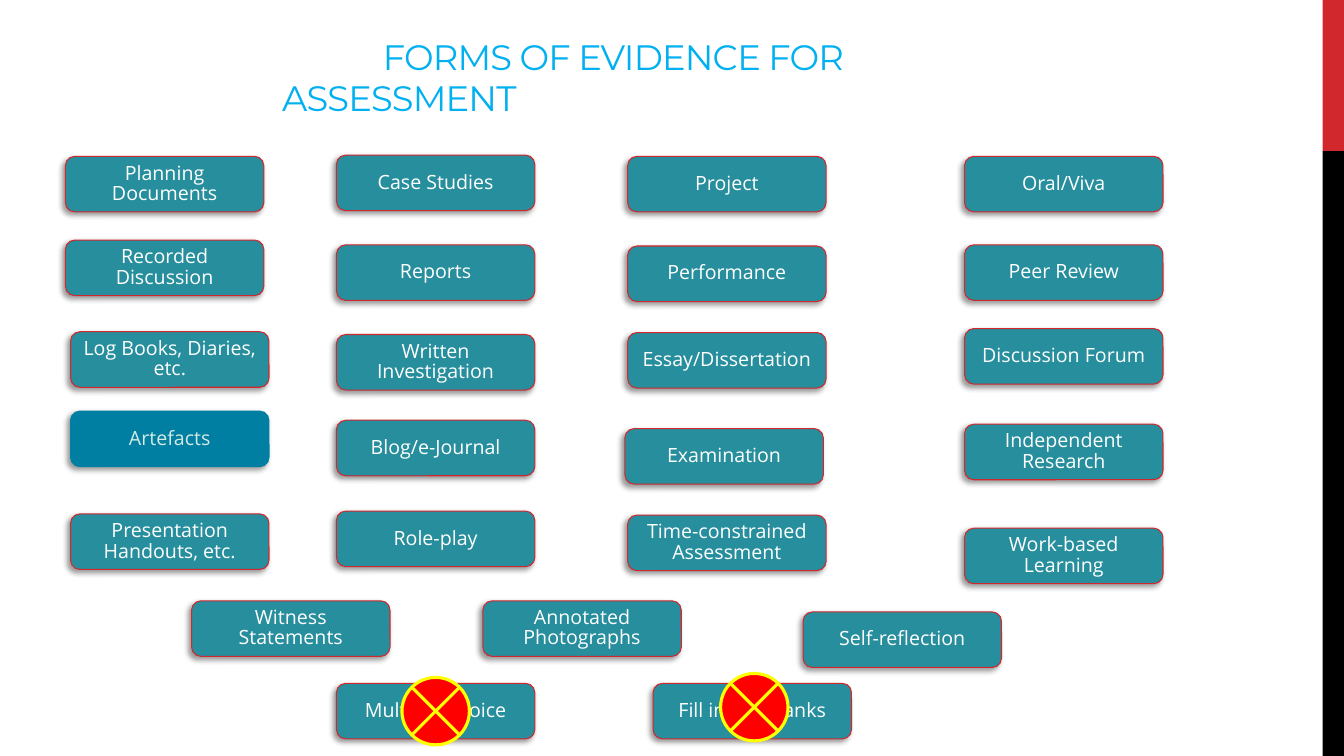
from lxml import etree
from pptx import Presentation
from pptx.dml.color import RGBColor
from pptx.enum.shapes import MSO_SHAPE
from pptx.enum.text import MSO_ANCHOR, PP_ALIGN
from pptx.oxml.ns import qn
from pptx.util import Cm, Pt

RECT = MSO_SHAPE.RECTANGLE
ROUNDED = MSO_SHAPE.ROUNDED_RECTANGLE
CROSS = MSO_SHAPE.FLOWCHART_SUMMING_JUNCTION
MIDDLE, BOTTOM = MSO_ANCHOR.MIDDLE, MSO_ANCHOR.BOTTOM
CENTER, LEFT = PP_ALIGN.CENTER, PP_ALIGN.LEFT

COLORS = {
    "red": "D1282E", "black": "000000", "sky": "00B0F0", "teal": "268E9C",
    "blue": "007FA3", "mint": "D4EAE4", "white": "FFFFFF",
    "cross": "FF0000", "yellow": "FFFF00",
}
TITLE_FONT = {"name": "Montserrat", "size": Pt(25.2)}
CARD_FONT = {"name": "Open Sans", "size": Pt(14)}
TITLE_PARA = {"alignment": LEFT, "line_spacing": 0.98}
CARD_PARA = {"alignment": CENTER, "line_spacing": 0.87}
SHADOW = {"blurRad": "50800", "dist": "38100", "dir": "8100000",
          "algn": "tr", "rotWithShape": "0"}

CARD_W, CARD_H, CROSS_SIZE = 5.0, 1.4, 1.7
COLUMNS = [
    (1.65, [("Planning Documents", 3.94), ("Recorded Discussion", 6.05)]),
    (1.78, [("Log Books, Diaries, etc.", 8.36), ("Artefacts", 10.36),
            ("Presentation Handouts, etc.", 12.95)]),
    (8.48, [("Case Studies", 3.91), ("Reports", 6.17),
            ("Written Investigation", 8.43), ("Blog/e-Journal", 10.59),
            ("Role-play", 12.88), ("Multiple Choice", 17.22)]),
    (15.82, [("Project", 3.94), ("Performance", 6.2),
             ("Essay/Dissertation", 8.38),
             ("Time-constrained Assessment", 12.98)]),
    (15.75, [("Examination", 10.8)]),
    (24.31, [("Oral/Viva", 3.94), ("Peer Review", 6.17),
             ("Discussion Forum", 8.28), ("Independent Research", 10.69),
             ("Work-based Learning", 13.31)]),
    (4.83, [("Witness Statements", 15.14)]),
    (12.17, [("Annotated Photographs", 15.14)]),
    (20.24, [("Self-reflection", 15.42)]),
    (16.46, [("Fill in the Blanks", 17.22)]),
]
HIGHLIGHT = "Artefacts"
CROSSES = [(10.13, 17.07), (18.16, 16.97)]


def rgb(name):
    """Return the named colour."""
    return RGBColor.from_string(COLORS[name])


def add_block(s, kind, box, fill, line=None, width=0.75):
    """Add a filled shape without a shadow, with an optional outline."""
    sp = s.shapes.add_shape(kind, *[Cm(v) for v in box])
    sp.shadow.inherit = False
    sp.fill.solid()
    sp.fill.fore_color.rgb = rgb(fill)
    if line:
        sp.line.color.rgb = rgb(line)
        sp.line.width = Pt(width)
    else:
        sp.line.fill.background()
    return sp


def add_text(sp, text, color, anchor, para, font):
    """Write one formatted paragraph and return it."""
    tf = sp.text_frame
    tf.word_wrap = True
    tf.vertical_anchor = anchor
    p = tf.paragraphs[0]
    r = p.add_run()
    r.text = text
    for target, values in ((p, para), (r.font, font)):
        for key, value in values.items():
            setattr(target, key, value)
    r.font.color.rgb = rgb(color)
    return p


def add_shadow(sp):
    """Give a shape a soft shadow towards its lower left."""
    effects = sp._element.spPr.find(qn("a:effectLst"))
    outer = etree.SubElement(effects, qn("a:outerShdw"), SHADOW)
    tint = etree.SubElement(outer, qn("a:srgbClr"), val=COLORS["black"])
    etree.SubElement(tint, qn("a:alpha"), val="40000")


def add_side_bar(s, left, top, width, height):
    """Draw the two-colour bar, red in its top fifth."""
    split = height / 5
    add_block(s, RECT, (left, top, width, split), "red")
    add_block(s, RECT, (left, top + split, width, height - split), "black")


def add_title(s, left, top, width, height):
    """Place the title with a deeper indent on its first line."""
    sp = s.shapes.add_textbox(Cm(left), Cm(top), Cm(width), Cm(height))
    p = add_text(sp, "FORMS OF EVIDENCE FOR ASSESSMENT", "sky", BOTTOM,
                 TITLE_PARA, TITLE_FONT)
    pPr = p._p.get_or_add_pPr()
    pPr.set("marL", str(Cm(5.08)))
    pPr.set("indent", str(Cm(2.54)))
    p.runs[0].font._element.set("spc", "-60")


def add_card(s, left, top, text):
    """Place one evidence card."""
    fill, line, color = "teal", "red", "white"
    if text == HIGHLIGHT:
        fill, line, color = "blue", "blue", "mint"
    sp = add_block(s, ROUNDED, (left, top, CARD_W, CARD_H), fill, line)
    add_shadow(sp)
    add_text(sp, text, color, MIDDLE, CARD_PARA, CARD_FONT)


def main():
    """Build and save the slide."""
    prs = Presentation()
    prs.slide_width, prs.slide_height = Cm(33.87), Cm(19.05)
    s = prs.slides.add_slide(prs.slide_layouts[6])
    add_side_bar(s, 33.33, 0, 0.54, 19.05)
    add_title(s, 1.78, 1.14, 22.05, 2.01)
    for left, cards in COLUMNS:
        for text, top in cards:
            add_card(s, left, top, text)
    for left, top in CROSSES:
        add_block(s, CROSS, (left, top, CROSS_SIZE, CROSS_SIZE),
                  "cross", "yellow", 2.25)
    prs.save("out.pptx")


if __name__ == "__main__":
    main()
